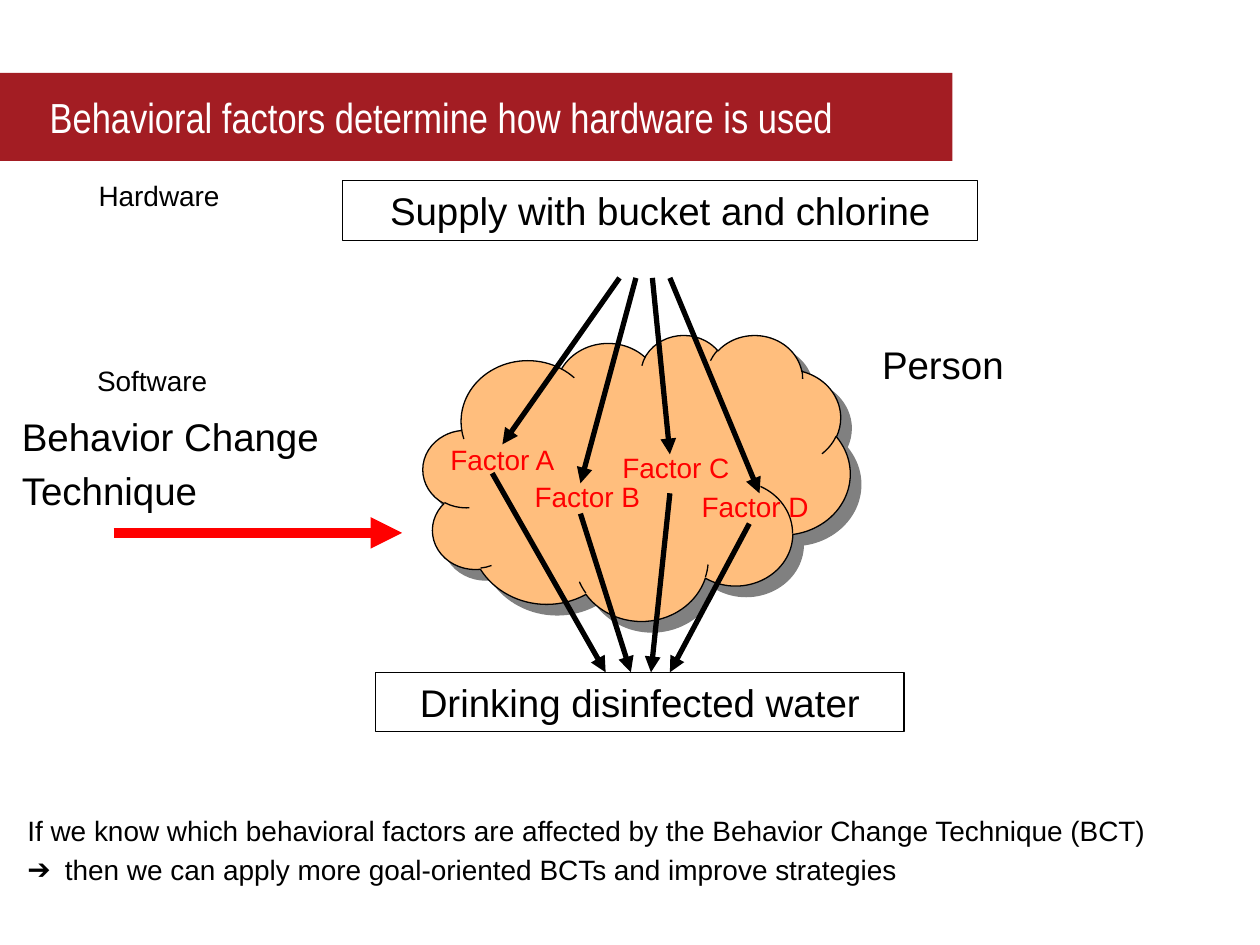
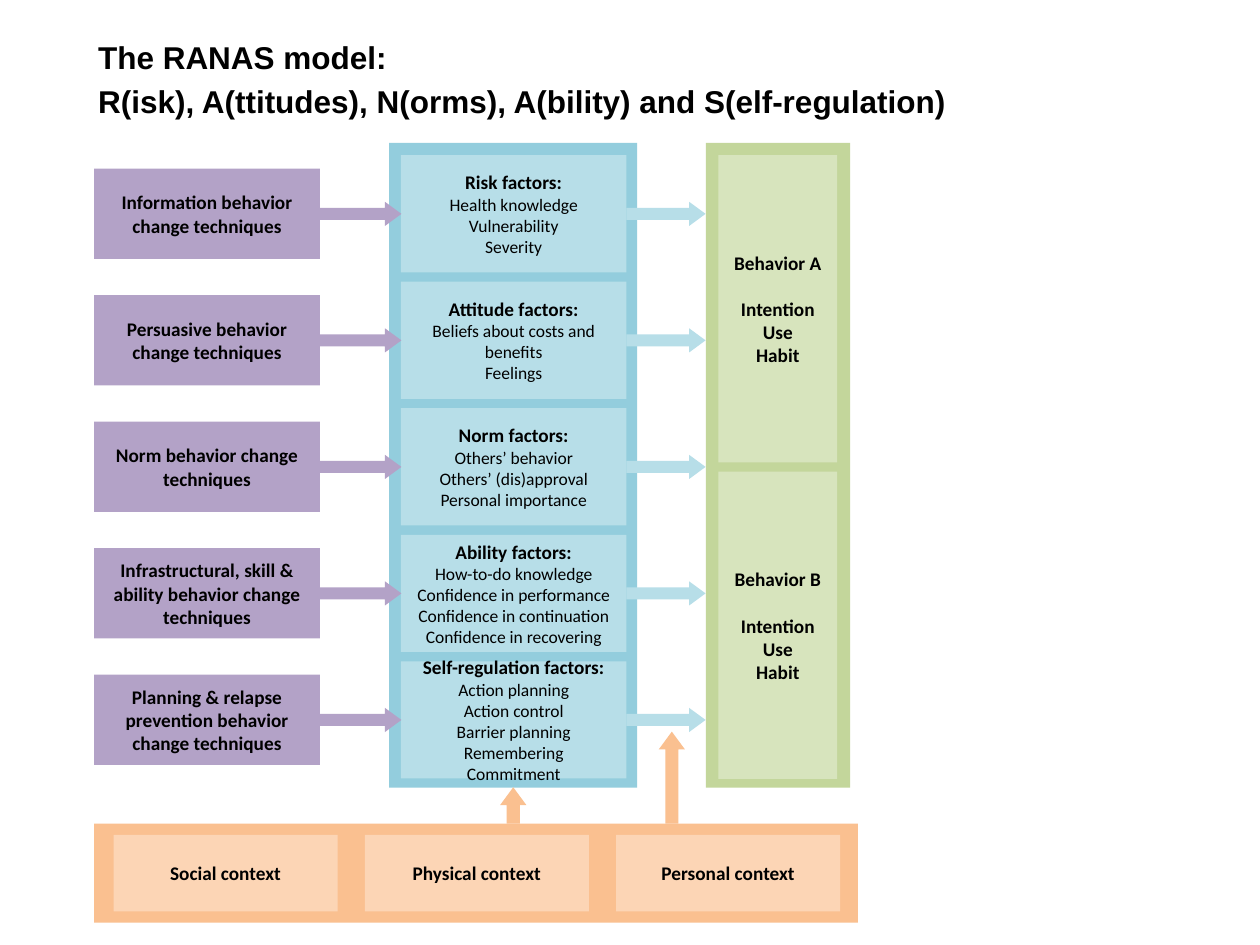
"""Build two slides on behavioral factors and the RANAS model."""
from lxml.etree import SubElement
from pptx import Presentation
from pptx.dml.color import RGBColor
from pptx.enum.shapes import MSO_CONNECTOR as CONNECTOR, MSO_SHAPE as SHAPE
from pptx.enum.text import MSO_ANCHOR as ANCHOR, PP_ALIGN as ALIGN
from pptx.oxml.ns import qn
from pptx.util import Pt

COLORS = {
    "black": "000000", "white": "FFFFFF", "band": "A31D23", "red": "FF0000",
    "cloud": "FFBE7D", "shadow": "808080", "technique": "B3A2C7",
    "factor_panel": "93CDDD", "factor": "B7DEE8",
    "behavior_panel": "C3D69B", "behavior": "D7E4BD",
    "context_panel": "FAC090", "context": "FCD5B5",
}
PARAGRAPH_GAP = 0.2
ROW_PITCH = 72.3
FACTOR_HEIGHT = 67
TECHNIQUE_HEIGHT = 51.6
ARROW_HEIGHT = 13.8
PANEL_MARGIN = 7
LABEL_WIDTH = 90

FACTOR_ARROWS = [
    ("Factor A", (82.1, 58.3), (112.2, 45.3, 62.7), (39.5, 79.2, 104.3)),
    ("Factor B", (131.1, 79.2), (121.6, 89.9, 85), (89.9, 102.3, 118.7)),
    ("Factor C", (182.1, 62.7), (131, 141, 68.4), (141, 90.7, 130.2)),
    ("Factor D", (227.4, 85), (141, 192.2, 90.7), (186.4, 108, 141)),
]
RANAS_ROWS = [
    ("Information behavior change techniques",
     ["Risk factors:", "Health knowledge", "Vulnerability", "Severity"]),
    ("Persuasive behavior change techniques",
     ["Attitude factors:", "Beliefs about costs and benefits", "Feelings"]),
    ("Norm behavior change techniques",
     ["Norm factors:", "Others’ behavior", "Others’ (dis)approval", "Personal importance"]),
    ("Infrastructural, skill & ability behavior change techniques",
     ["Ability factors:", "How-to-do knowledge", "Confidence in performance",
      "Confidence in continuation", "Confidence in recovering"]),
    ("Planning & relapse prevention behavior change techniques",
     ["Self-regulation factors:", "Action planning", "Action control",
      "Barrier planning", "Remembering", "Commitment"]),
]


def rgb(name):
    """Return the palette color called name."""
    return RGBColor.from_string(COLORS[name])


def write(shape, lines, size, color="black", font="Arial", bold=False,
          align=ALIGN.LEFT, gap=0):
    """Fill a shape with one paragraph per line and format its runs."""
    frame = shape.text_frame
    frame.text = "\n".join(lines)
    for index, paragraph in enumerate(frame.paragraphs):
        paragraph.alignment = align
        if index and gap:
            paragraph.space_before = Pt(gap)
        for run in paragraph.runs:
            run.font.size, run.font.name, run.font.bold = Pt(size), font, bold
            run.font.color.rgb = rgb(color)
    return frame


def add_block(slide, kind, box, fill=None, line=None):
    """Add a preset shape without shadow, with optional fill and outline."""
    shape = slide.shapes.add_shape(kind, *map(Pt, box))
    shape.shadow.inherit = False
    if fill:
        shape.fill.solid()
        shape.fill.fore_color.rgb = rgb(fill)
    else:
        shape.fill.background()
    if line:
        shape.line.color.rgb = rgb(line)
        shape.line.width = Pt(0.75)
    else:
        shape.line.fill.background()
    shape.text_frame.word_wrap = True
    shape.text_frame.vertical_anchor = ANCHOR.MIDDLE
    return shape


def add_label(slide, box, lines, size, wrap=False, **style):
    """Add a text box whose paragraphs are spaced by their type size."""
    label = slide.shapes.add_textbox(*map(Pt, box))
    label.text_frame.word_wrap = wrap
    return write(label, lines, size, gap=size * PARAGRAPH_GAP, **style)


def add_arrow(slide, start, end, width=3, color="black"):
    """Add a straight connector with a triangle head at its end."""
    arrow = slide.shapes.add_connector(CONNECTOR.STRAIGHT, *map(Pt, (*start, *end)))
    arrow.line.width = Pt(width)
    arrow.line.color.rgb = rgb(color)
    SubElement(arrow.line._get_or_add_ln(), qn("a:tailEnd"), type="triangle")
    SubElement(arrow._element.spPr, qn("a:effectLst"))


def add_block_arrow(slide, kind, box, fill):
    """Add a wide block arrow with the head shape used in the model."""
    arrow = add_block(slide, kind, box, fill)
    arrow.adjustments[0], arrow.adjustments[1] = 0.5, 0.68


def add_title_band(slide, box, title):
    """Draw the colored band with the slide title."""
    band = add_block(slide, SHAPE.RECTANGLE, box, "band")
    frame = write(band, [title], 24, "white", "Arial Narrow")
    frame.margin_left = frame.margin_right = Pt(28.4)


def add_outlined_box(slide, box, text):
    """Draw an outlined box with a centered line of text."""
    shape = add_block(slide, SHAPE.RECTANGLE, box, line="black")
    write(shape, [text], 22, align=ALIGN.CENTER)


def add_person(slide, box):
    """Draw the cloud with its factors and the arrows passing through it."""
    left, top, width, height = box
    cloud = add_block(slide, SHAPE.CLOUD, box, "cloud", "black")
    effects = cloud._element.spPr.find(qn("a:effectLst"))
    shadow = SubElement(effects, qn("a:outerShdw"), dist=str(Pt(8.5)),
                        dir="2700000", algn="ctr", rotWithShape="0")
    SubElement(shadow, qn("a:srgbClr"), val=COLORS["shadow"])
    for _, _, (source_x, tip_x, tip_y), _ in FACTOR_ARROWS:
        add_arrow(slide, (left + source_x, top - 32.4), (left + tip_x, top + tip_y))
    for name, (label_right, label_top), _, _ in FACTOR_ARROWS:
        add_label(slide, (left + label_right - LABEL_WIDTH, top + label_top,
                          LABEL_WIDTH, 26.6),
                  [name], 16, color="red", align=ALIGN.RIGHT)
    for _, _, _, (start_x, start_y, target_x) in FACTOR_ARROWS:
        add_arrow(slide, (left + start_x, top + start_y), (left + target_x, top + 193))
    add_label(slide, (left + width + 10.5, top, 85, 34), ["Person"], 22,
              align=ALIGN.CENTER)


def add_software(slide, box):
    """Draw the side labels and the red arrow of the change technique."""
    left, top, width, height = box
    add_label(slide, (left, top, 121.2, 37), ["Software"], 16, align=ALIGN.RIGHT)
    add_label(slide, (left + 1, top + 28, 192, 98),
              ["Behavior Change", "Technique"], 22)
    add_arrow(slide, (left + 60.5, top + height), (left + width, top + height), 6, "red")


def add_conclusion(slide, box):
    """Write the closing statement with an arrow bullet on its second line."""
    frame = add_label(slide, box, [
        "If we know which behavioral factors are affected by the Behavior Change Technique (BCT)",
        "then we can apply more goal-oriented BCTs and improve strategies"], 16, wrap=True)
    properties = frame.paragraphs[1]._p.get_or_add_pPr()
    indent = Pt(21.4)
    properties.set("marL", str(indent))
    properties.set("indent", str(-indent))
    SubElement(properties, qn("a:buFont"), typeface="Arial")
    SubElement(properties, qn("a:buChar"), char="➔")


def build_hardware_slide(slide):
    """Build the slide on how behavioral factors steer hardware use."""
    add_title_band(slide, (0, 41.6, 544.3, 50.4),
                   "Behavioral factors determine how hardware is used")
    add_outlined_box(slide, (195.8, 103.3, 363, 34), "Supply with bucket and chlorine")
    add_outlined_box(slide, (214.6, 384.2, 302, 34), "Drinking disinfected water")
    add_person(slide, (241.8, 191.2, 244, 163.4))
    add_label(slide, (3, 98.4, 129.6, 37), ["Hardware"], 16, align=ALIGN.RIGHT)
    add_software(slide, (4.4, 204.4, 225.4, 100.1))
    add_conclusion(slide, (8.6, 461.4, 711, 50))


def add_model_box(slide, box, fill, lines):
    """Draw one centered box of the model, with its text in bold."""
    shape = add_block(slide, SHAPE.RECTANGLE, box, fill)
    return write(shape, lines, 11, font="Calibri", bold=True, align=ALIGN.CENTER)


def add_factor_rows(slide, box):
    """Draw the factor panel with its techniques and arrows, row by row."""
    left, top, width, height = box
    add_block(slide, SHAPE.RECTANGLE, box, "factor_panel")
    factor_left, factor_width = left + 6.6, 129
    technique_left, technique_width = left - 168.6, 129
    technique_right = technique_left + technique_width
    for row, (technique, factors) in enumerate(RANAS_ROWS):
        row_top = top + PANEL_MARGIN + row * ROW_PITCH
        middle = row_top + FACTOR_HEIGHT / 2
        arrow_top = middle - ARROW_HEIGHT / 2
        frame = add_model_box(slide, (factor_left, row_top, factor_width, FACTOR_HEIGHT),
                              "factor", factors)
        for paragraph in frame.paragraphs[1:]:
            for run in paragraph.runs:
                run.font.size, run.font.bold = Pt(10), False
        add_model_box(slide, (technique_left, middle - TECHNIQUE_HEIGHT / 2,
                              technique_width, TECHNIQUE_HEIGHT),
                      "technique", [technique])
        add_block_arrow(slide, SHAPE.RIGHT_ARROW,
                        (technique_right, arrow_top, 46.6, ARROW_HEIGHT), "technique")
        add_block_arrow(slide, SHAPE.RIGHT_ARROW,
                        (factor_left + factor_width, arrow_top, 45.2, ARROW_HEIGHT), "factor")


def add_behaviors(slide, box):
    """Draw the behavior panel with its two boxes."""
    left, top, width, height = box
    add_block(slide, SHAPE.RECTANGLE, box, "behavior_panel")
    for index, name in enumerate(("Behavior A", "Behavior B")):
        behavior_top = top + PANEL_MARGIN + index * 2.5 * ROW_PITCH
        frame = add_model_box(slide, (left + 7.2, behavior_top, 67.8, 175.6), "behavior",
                              [name, "Intention", "Use", "Habit"])
        frame.paragraphs[1].space_before = Pt(13.4)


def add_contexts(slide, box):
    """Draw the context panel, its boxes and the arrows rising from it."""
    left, top, width, height = box
    add_block(slide, SHAPE.RECTANGLE, box, "context_panel")
    for index, name in enumerate(("Social context", "Physical context", "Personal context")):
        add_model_box(slide, (left + 11.1 + index * 143.6, top + 6.4, 128, 43.7),
                      "context", [name])
    for offset, length in ((232, 20.8), (322.6, 52.6)):
        add_block_arrow(slide, SHAPE.UP_ARROW,
                        (left + offset, top - length, 15, length), "context_panel")


def build_ranas_slide(slide):
    """Build the slide with the RANAS model."""
    add_label(slide, (49, 18.2, 504, 55), [
        "The RANAS model:",
        "R(isk), A(ttitudes), N(orms), A(bility) and S(elf-regulation)"], 18, bold=True)
    add_factor_rows(slide, (222.4, 81.7, 141.8, 368.4))
    add_behaviors(slide, (403.4, 81.7, 82.4, 368.4))
    add_contexts(slide, (53.8, 470.7, 436.5, 56.6))


def main():
    """Create the presentation and save it."""
    presentation = Presentation()
    presentation.slide_width, presentation.slide_height = Pt(720), Pt(540)
    for build in (build_hardware_slide, build_ranas_slide):
        build(presentation.slides.add_slide(presentation.slide_layouts[6]))
    presentation.save("out.pptx")


if __name__ == "__main__":
    main()
